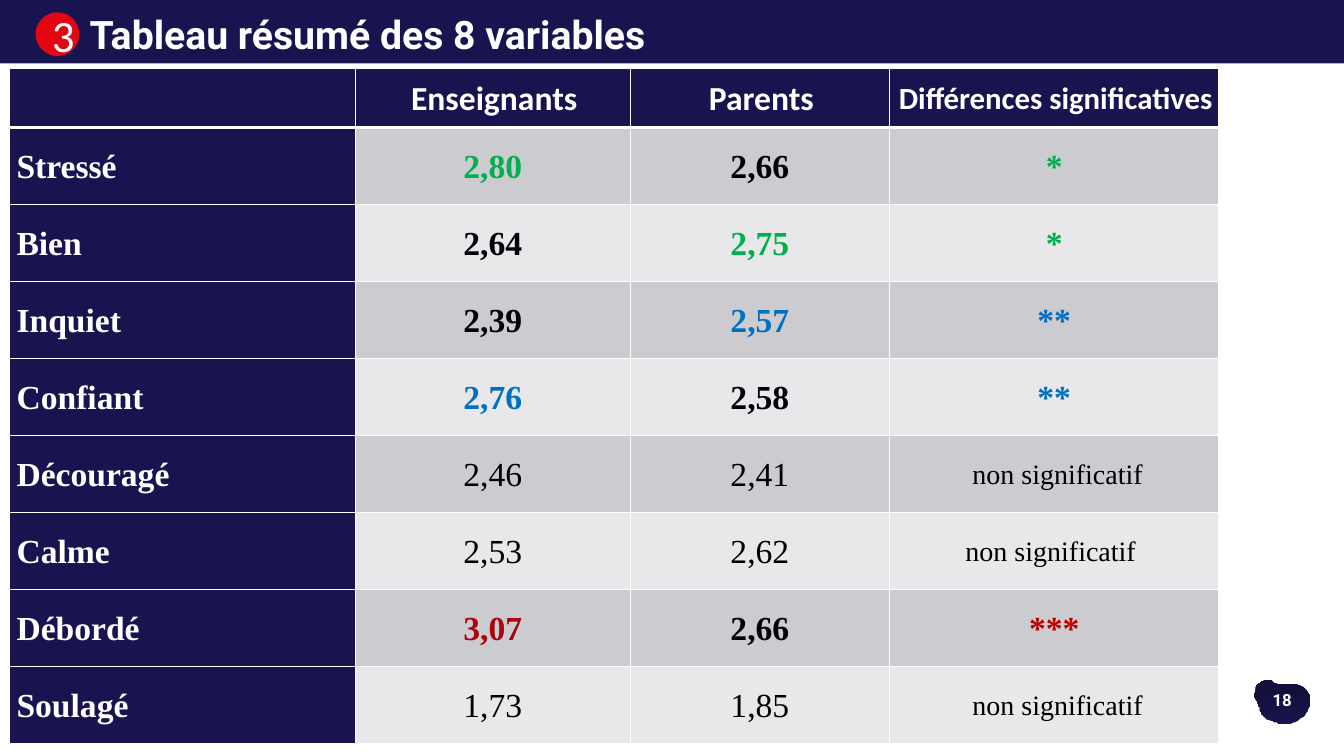
import pptx
import pptx.dml.color
import pptx.enum.shapes
import pptx.enum.text
import pptx.oxml
import pptx.oxml.ns
import pptx.util

Pt = pptx.util.Pt
RGBColor = pptx.dml.color.RGBColor
ALIGN = pptx.enum.text.PP_ALIGN
MIDDLE = pptx.enum.text.MSO_ANCHOR.MIDDLE
SHAPE = pptx.enum.shapes.MSO_SHAPE

WHITE = RGBColor(0xFF, 0xFF, 0xFF)
BLACK = RGBColor(0x00, 0x00, 0x00)
INK = RGBColor(0x01, 0x02, 0x05)
BAR_NAVY = RGBColor(0x18, 0x14, 0x4F)
NAVY = RGBColor(0x19, 0x14, 0x4F)
DEEP_NAVY = RGBColor(0x13, 0x0F, 0x3B)
BADGE_RED = RGBColor(0xE3, 0x05, 0x12)
GREEN = RGBColor(0x00, 0xB0, 0x50)
BLUE = RGBColor(0x00, 0x70, 0xC0)
DARK_RED = RGBColor(0xAA, 0x04, 0x0D)
RED = RGBColor(0xC0, 0x00, 0x00)
BANDS = [RGBColor(0xCC, 0xCC, 0xD0), RGBColor(0xE8, 0xE7, 0xE9)]

HEADINGS = ["", "Enseignants", "Parents", "Différences significatives"]
VARIABLES = [
    ("Stressé", "2,80", "2,66", "*"),
    ("Bien", "2,64", "2,75", "*"),
    ("Inquiet", "2,39", "2,57", "**"),
    ("Confiant", "2,76", "2,58", "**"),
    ("Découragé", "2,46", "2,41", " non significatif"),
    ("Calme", "2,53", "2,62", "non significatif "),
    ("Débordé", "3,07", "2,66", "***"),
    ("Soulagé", "1,73", "1,85", " non significatif"),
]
# Colours of the higher mean and of the stars, by level of significance
ACCENTS = {"*": (GREEN, GREEN), "**": (BLUE, BLUE), "***": (DARK_RED, RED)}
COLUMN_WIDTHS = [247, 196.5, 185, 235.5]
HEADER_HEIGHT, ROW_HEIGHT = 42, 55

# Cubic curves of the page-number blob: two control points and an end point
BLOB_START = (902.2, 511.2)
BLOB_CURVES = [
    ((900, 509), (900, 506.2), (899.3, 504.7)),
    ((899.3, 504.7), (899.3, 504), (898.6, 502.6)),
    ((898.6, 502.6), (895.7, 499), (896.4, 496.1)),
    ((896.4, 487.4), (902.2, 486.7), (904.3, 486)),
    ((907.2, 484.6), (907.9, 487.4), (913, 488.9)),
    ((918, 489.6), (928.1, 486), (933.1, 493.2)),
    ((938.2, 499.7), (935.3, 504.7), (933.8, 508.3)),
    ((931.7, 511.2), (927.4, 514.8), (923.8, 516.2)),
    ((920.2, 517.7), (915.1, 517.7), (911.5, 516.2)),
    ((907.9, 515.5), (904.3, 513.4), BLOB_START),
]
CURVE_STEPS = 8


def style_text(frame, text, size, font_name, color, bold, align):
    para = frame.paragraphs[0]
    para.text = text
    para.alignment = align
    para.font.size = Pt(size)
    para.font.name = font_name
    para.font.color.rgb = color
    para.font.bold = bold
    return para


def style_cell(cell, fill, bottom_width):
    """Fill the cell, centre it vertically and give it white borders."""
    cell.vertical_anchor = MIDDLE
    cell.margin_top = cell.margin_bottom = 0
    properties = cell._tc.get_or_add_tcPr()
    for tag, width in (("lnL", 1), ("lnR", 1), ("lnT", 1), ("lnB", bottom_width)):
        properties.append(pptx.oxml.parse_xml(
            f'<a:{tag} {pptx.oxml.ns.nsdecls("a")} w="{Pt(width)}"><a:solidFill>'
            f'<a:srgbClr val="{WHITE}"/></a:solidFill></a:{tag}>'))
    cell.fill.solid()
    cell.fill.fore_color.rgb = fill


deck = pptx.Presentation()
deck.slide_width, deck.slide_height = Pt(960), Pt(540)
page = deck.slides.add_slide(deck.slide_layouts[5])
title = page.shapes.title

# Page number on its blob
points = []
start = BLOB_START
for first, second, end in BLOB_CURVES:
    for step in range(1, CURVE_STEPS + 1):
        t = step / CURVE_STEPS
        points.append(tuple(
            (1 - t) ** 3 * a + 3 * (1 - t) ** 2 * t * b + 3 * (1 - t) * t ** 2 * c + t ** 3 * d
            for a, b, c, d in zip(start, first, second, end)))
    start = end
builder = page.shapes.build_freeform(*BLOB_START, scale=Pt(1))
builder.add_line_segments(points)
blob = builder.convert_to_shape()
blob.shadow.inherit = False
blob.line.fill.background()
blob.fill.gradient()
blob.fill.gradient_angle = 90
for stop, position, color in zip(blob.fill.gradient_stops, (0, 0.76), (NAVY, DEEP_NAVY)):
    stop.position = position
    stop.color.rgb = color

number_box = page.shapes.add_textbox(Pt(891.4), Pt(488.9), Pt(49), Pt(21.6))
number_box.text_frame.word_wrap = True
style_text(number_box.text_frame, "18", 12, "Roboto", WHITE, True, ALIGN.CENTER)

# Title bar with its numbered badge
bar = page.shapes.add_shape(SHAPE.RECTANGLE, 0, 0, Pt(960), Pt(45.4))
badge = page.shapes.add_shape(SHAPE.OVAL, Pt(25.4), Pt(8.8), Pt(31.2), Pt(31.2))
for shape, color in ((bar, BAR_NAVY), (badge, BADGE_RED)):
    shape.shadow.inherit = False
    shape.fill.solid()
    shape.fill.fore_color.rgb = color
    shape.line.fill.background()
    title.element.addprevious(shape.element)
badge.text_frame.vertical_anchor = MIDDLE
style_text(badge.text_frame, "3", 32, "Calibri", WHITE, False, ALIGN.CENTER)

title.left, title.top, title.width, title.height = Pt(56.9), Pt(3.6), Pt(729.4), Pt(41.2)
title.text_frame.auto_size = pptx.enum.text.MSO_AUTO_SIZE.NONE
title.text_frame.vertical_anchor = MIDDLE
style_text(title.text_frame, "Tableau résumé des 8 variables", 28, "Roboto", WHITE, True, ALIGN.LEFT)

# Summary table
table = page.shapes.add_table(
    len(VARIABLES) + 1, len(HEADINGS), Pt(6.8), Pt(49), Pt(sum(COLUMN_WIDTHS)),
    Pt(HEADER_HEIGHT + ROW_HEIGHT * len(VARIABLES))).table
for column, width in zip(table.columns, COLUMN_WIDTHS):
    column.width = Pt(width)
for index, row in enumerate(table.rows):
    row.height = Pt(ROW_HEIGHT if index else HEADER_HEIGHT)

for column, heading in enumerate(HEADINGS):
    cell = table.cell(0, column)
    style_cell(cell, NAVY, 3)
    cell.margin_left, cell.margin_right = Pt(2.7), Pt(0.7)
    if heading:
        size = 22 if column == 3 else 24
        para = style_text(cell.text_frame, heading, size, "Calibri", WHITE, True, ALIGN.CENTER)
        para.line_spacing = 1.07

for row, values in enumerate(VARIABLES, start=1):
    means, verdict = values[1:3], values[3]
    significant = verdict in ACCENTS
    for column, text in enumerate(values):
        cell = table.cell(row, column)
        style_cell(cell, BANDS[(row - 1) % 2] if column else NAVY, 1)
        cell.margin_left = cell.margin_right = Pt(5)
        color = INK if significant else BLACK
        if column == 0:
            color = WHITE
        elif significant and column == 3:
            color = ACCENTS[verdict][1]
        elif significant and text == max(means):
            color = ACCENTS[verdict][0]
        para = style_text(
            cell.text_frame, text, 20 if column == 3 and not significant else 24,
            "Times New Roman", color, significant or column == 0,
            ALIGN.CENTER if column else ALIGN.LEFT)
        para.line_spacing = 1.07
        para.space_after = Pt(8)

deck.save("out.pptx")
